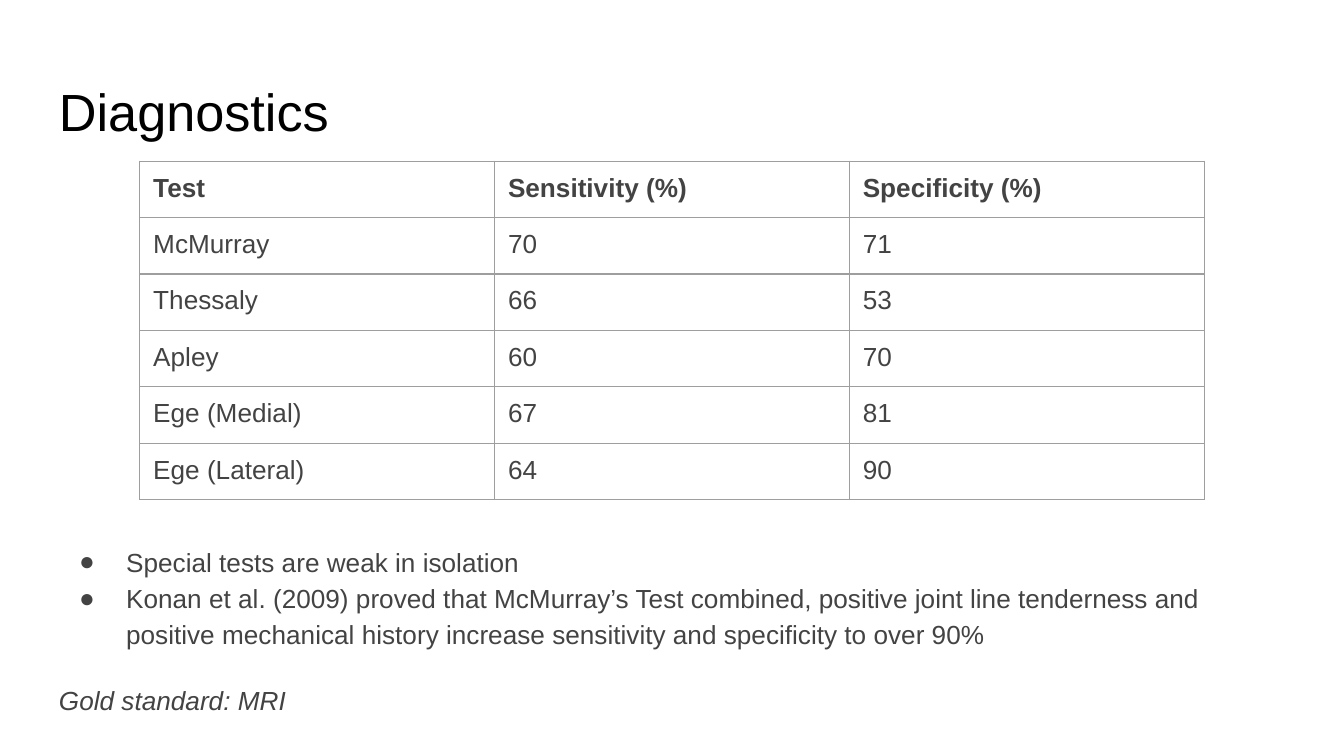
import dataclasses

import pptx
import pptx.dml.color
import pptx.enum.text
import pptx.oxml
import pptx.oxml.ns
import pptx.util

Inches = pptx.util.Inches
Pt = pptx.util.Pt

FONT = "Arial"
BLACK, GREY, BORDER = "000000", "434343", "9E9E9E"
MARGIN, CELL_MARGIN = 0.1, 0.09
LEFT, WIDTH = 0.34, 9.32
PAGE_WIDTH = 10


@dataclasses.dataclass
class Line:
    text: str
    size: float = 14
    color: str = GREY
    bold: bool = False
    italic: bool = False
    bullet: bool = False
    line_spacing: float = 1.0
    gap: float = 0


def hex_color(value: str) -> pptx.dml.color.RGBColor:
    return pptx.dml.color.RGBColor.from_string(value)


def add_bullet(para) -> None:
    """Give the paragraph a hanging round bullet."""
    properties = para._p.get_or_add_pPr()
    properties.set("marL", str(Inches(0.5)))
    properties.set("indent", str(Inches(-0.35)))
    namespace = pptx.oxml.ns.nsdecls("a")
    for xml in (
        f'<a:buClr {namespace}><a:srgbClr val="{GREY}"/></a:buClr>',
        f'<a:buFont {namespace} typeface="{FONT}"/>',
        f'<a:buChar {namespace} char="●"/>',
    ):
        properties.append(pptx.oxml.parse_xml(xml))


def write_line(para, line: Line) -> None:
    para.line_spacing = line.line_spacing
    para.space_before = para.space_after = Pt(line.gap)
    if line.bullet:
        add_bullet(para)
    span = para.add_run()
    span.text = line.text
    span.font.name = FONT
    span.font.size = Pt(line.size)
    span.font.bold = line.bold
    span.font.italic = line.italic
    span.font.color.rgb = hex_color(line.color)


def add_text(page, top: float, height: float, lines: list[Line]) -> None:
    box = page.shapes.add_textbox(Inches(LEFT), Inches(top), Inches(WIDTH), Inches(height))
    frame = box.text_frame
    frame.word_wrap = True
    frame.vertical_anchor = pptx.enum.text.MSO_ANCHOR.TOP
    frame.margin_left = frame.margin_right = Inches(MARGIN)
    frame.margin_top = frame.margin_bottom = Inches(MARGIN)
    for index, line in enumerate(lines):
        para = frame.add_paragraph() if index else frame.paragraphs[0]
        write_line(para, line)


def add_borders(cell) -> None:
    properties = cell._tc.get_or_add_tcPr()
    for index, side in enumerate("LRTB"):
        border = pptx.oxml.parse_xml(
            f'<a:ln{side} {pptx.oxml.ns.nsdecls("a")} w="{Pt(0.75)}">'
            f'<a:solidFill><a:srgbClr val="{BORDER}"/></a:solidFill></a:ln{side}>'
        )
        properties.insert(index, border)


def add_grid(page, rows: list[tuple[str, ...]], left: float, top: float,
             column_width: float, row_height: float) -> None:
    columns = len(rows[0])
    table = page.shapes.add_table(
        len(rows), columns, Inches(left), Inches(top),
        Inches(column_width * columns), Inches(row_height * len(rows)),
    ).table
    table.first_row = True
    table.horz_banding = False
    for row_index, row in enumerate(rows):
        for column_index, text in enumerate(row):
            cell = table.cell(row_index, column_index)
            cell.margin_left = cell.margin_right = Inches(MARGIN)
            cell.margin_top = cell.margin_bottom = Inches(CELL_MARGIN)
            cell.fill.background()
            add_borders(cell)
            write_line(cell.text_frame.paragraphs[0], Line(text, bold=row_index == 0))


TESTS = [
    ("Test", "Sensitivity (%)", "Specificity (%)"),
    ("McMurray", "70", "71"),
    ("Thessaly", "66", "53"),
    ("Apley", "60", "70"),
    ("Ege (Medial)", "67", "81"),
    ("Ege (Lateral)", "64", "90"),
]

NOTES = [
    Line("Special tests are weak in isolation", bullet=True, line_spacing=1.15),
    Line("Konan et al. (2009) proved that McMurray’s Test combined, positive joint line "
         "tenderness and positive mechanical history increase sensitivity and specificity "
         "to over 90%", bullet=True, line_spacing=1.15),
    Line("Gold standard: MRI", italic=True, line_spacing=1.15, gap=16),
]


def main() -> None:
    # A 16:9 page
    deck = pptx.Presentation()
    deck.slide_width = Inches(PAGE_WIDTH)
    deck.slide_height = Inches(PAGE_WIDTH * 9 / 16)
    page = deck.slides.add_slide(deck.slide_layouts[6])

    # Title
    add_text(page, 0.49, 0.63, [Line("Diagnostics", size=28, color=BLACK)])
    # Conclusions below the table
    add_text(page, 3.93, 0.93, NOTES)
    # Accuracy of each test
    add_grid(page, TESTS, left=1.04, top=1.2, column_width=2.64, row_height=0.42)

    deck.save("out.pptx")


if __name__ == "__main__":
    main()
